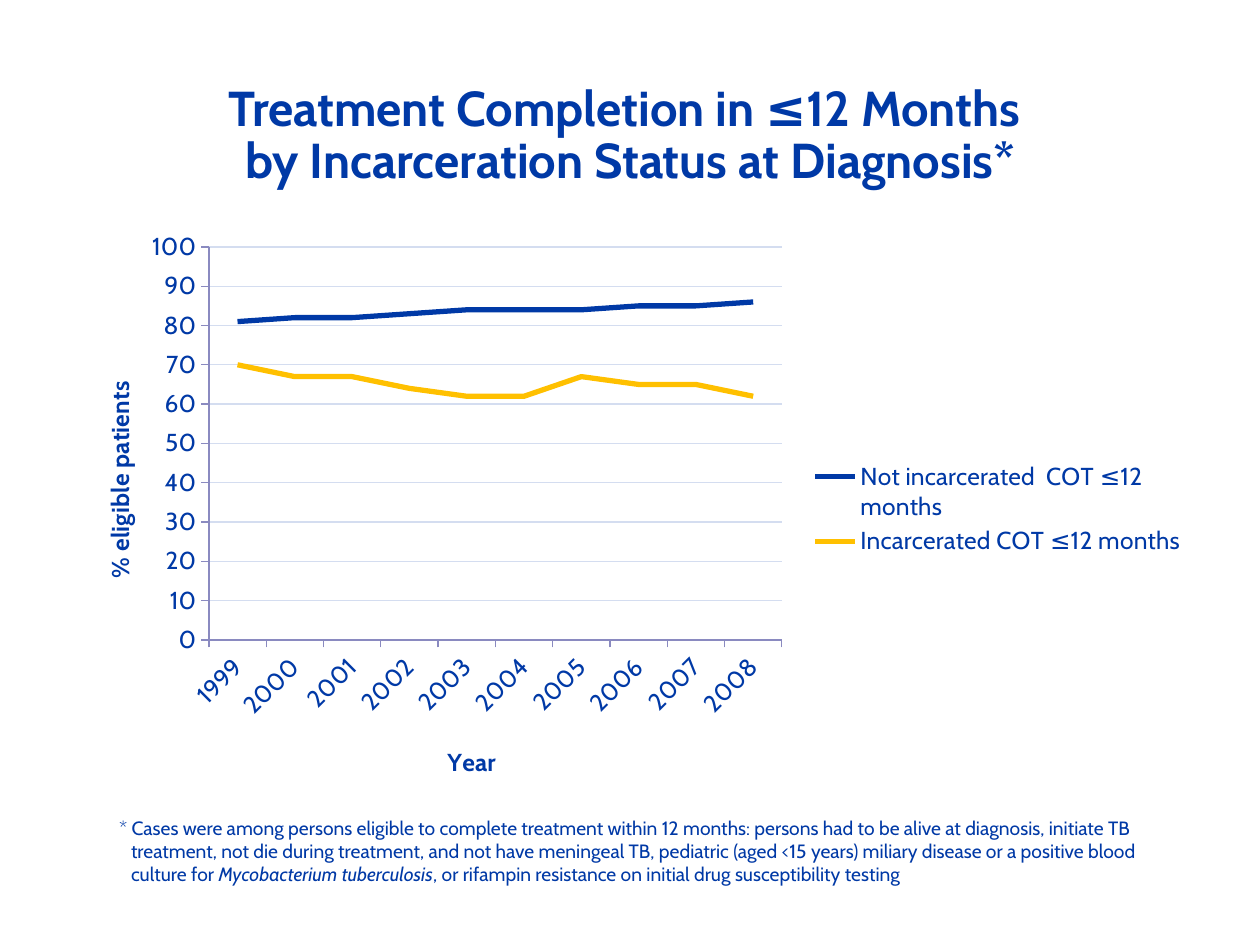
from lxml import etree
from pptx import Presentation
from pptx.chart.data import CategoryChartData
from pptx.dml.color import RGBColor
from pptx.enum.chart import XL_CHART_TYPE, XL_LEGEND_POSITION, XL_TICK_MARK
from pptx.enum.text import MSO_ANCHOR, PP_ALIGN
from pptx.oxml.ns import qn
from pptx.util import Emu, Pt

BLUE = RGBColor(0x00, 0x39, 0xA6)
GOLD = RGBColor(0xFF, 0xC0, 0x00)
GRID = RGBColor(0xD4, 0xDD, 0xF0)
AXIS = RGBColor(0x8A, 0x8A, 0xC0)
FONT = "Cabin"

CHART_BOX = (63, 220, 1134, 577)
YEARS = [str(year) for year in range(1999, 2009)]
SERIES = [
    ("Not incarcerated  COT ≤12 months ", BLUE, [81, 82, 82, 83, 84, 84, 84, 85, 85, 86]),
    ("Incarcerated COT ≤12 months", GOLD, [70, 67, 67, 64, 62, 62, 67, 65, 65, 62]),
]
TITLE_LINES = ["Treatment Completion in ≤12 Months ", "by Incarceration Status at Diagnosis*"]
FOOTNOTE_LINES = [
    [("* Cases were among persons eligible to complete treatment within 12 months: "
      "persons had to be alive at diagnosis, initiate TB", False)],
    [("treatment, not die during treatment, and not have meningeal TB, "
      "pediatric (aged <15 years) miliary disease or a positive blood", False)],
    [("culture for ", False), ("Mycobacterium tuberculosis", True),
     (", or rifampin resistance on initial drug susceptibility testing", False)],
]


def px(length):
    return Emu(round(length * 914400 / 126))


def style_font(font, size, bold=False, italic=False):
    font.name = FONT
    font.size = Pt(size)
    font.bold = bold
    font.italic = italic
    font.color.rgb = BLUE


def add_run(paragraph, text, size, bold=False, italic=False):
    run = paragraph.add_run()
    run.text = text
    style_font(run.font, size, bold, italic)


def place(shape, left, top, width, height):
    shape.left, shape.top = px(left), px(top)
    shape.width, shape.height = px(width), px(height)


def fill_title(title):
    place(title, 63, 38, 1134, 157)
    frame = title.text_frame
    frame.word_wrap = True
    frame.vertical_anchor = MSO_ANCHOR.BOTTOM
    paragraph = frame.paragraphs[0]
    paragraph.alignment = PP_ALIGN.CENTER
    paragraph.line_spacing = Pt(30)
    for index, line in enumerate(TITLE_LINES):
        if index:
            paragraph.add_line_break()
        add_run(paragraph, line, 28, bold=True)


def add_footnote(slide):
    box = slide.shapes.add_textbox(px(119), px(816), px(1078), px(74))
    frame = box.text_frame
    frame.word_wrap = True
    frame.margin_left = frame.margin_right = frame.margin_top = frame.margin_bottom = 0
    paragraph = frame.paragraphs[0]
    # Hanging indent keeps the asterisk outside the text
    properties = paragraph._p.get_or_add_pPr()
    properties.set("marL", str(px(12)))
    properties.set("indent", str(px(-12)))
    for index, line in enumerate(FOOTNOTE_LINES):
        if index:
            paragraph.add_line_break()
        for text, italic in line:
            add_run(paragraph, text, 11, italic=italic)


def set_layout(element, index, left, top, width=None, height=None, inner=False):
    """Place a chart part by its slide position, as fractions of the chart."""
    for old in element.findall(qn("c:layout")):
        element.remove(old)
    layout = etree.Element(qn("c:layout"))
    manual = etree.SubElement(layout, qn("c:manualLayout"))
    chart_left, chart_top, chart_width, chart_height = CHART_BOX
    settings = [("xMode", "edge"), ("yMode", "edge"),
                ("x", (left - chart_left) / chart_width),
                ("y", (top - chart_top) / chart_height)]
    if inner:
        settings.insert(0, ("layoutTarget", "inner"))
    if width:
        settings += [("w", width / chart_width), ("h", height / chart_height)]
    for name, value in settings:
        text = value if isinstance(value, str) else f"{value:.4f}"
        etree.SubElement(manual, qn(f"c:{name}")).set("val", text)
    element.insert(index, layout)


def format_axis(axis, title, left, top):
    axis.major_tick_mark = XL_TICK_MARK.OUTSIDE
    axis.minor_tick_mark = XL_TICK_MARK.NONE
    axis.format.line.color.rgb = AXIS
    axis.format.line.width = Pt(0.75)
    style_font(axis.tick_labels.font, 14)
    paragraph = axis.axis_title.text_frame.paragraphs[0]
    add_run(paragraph, title, 14, bold=True)
    set_layout(axis.axis_title._element, 1, left, top)


def add_line_chart(slide):
    data = CategoryChartData()
    data.categories = YEARS
    for name, _, values in SERIES:
        data.add_series(name, values)
    box = [px(length) for length in CHART_BOX]
    chart = slide.shapes.add_chart(XL_CHART_TYPE.LINE, *box, data).chart
    chart.has_title = False
    style_font(chart.font, 10)
    plot = chart.plots[0]
    plot.vary_by_categories = False
    for series, (_, color, _) in zip(plot.series, SERIES):
        series.smooth = False
        series.format.line.color.rgb = color
        series.format.line.width = Pt(3)

    # Axes
    format_axis(chart.category_axis, "Year", 443, 741)
    labels = chart.category_axis._element.find(qn("c:txPr"))
    labels.find(qn("a:bodyPr")).set("rot", "-2700000")
    value_axis = chart.value_axis
    format_axis(value_axis, "% eligible patients", 98, 377)
    title_body = value_axis.axis_title.text_frame._txBody.find(qn("a:bodyPr"))
    title_body.set("rot", "-5400000")
    title_body.set("vert", "horz")
    value_axis.minimum_scale, value_axis.maximum_scale = 0, 100
    value_axis.major_unit = 10
    value_axis.has_major_gridlines = True
    value_axis.major_gridlines.format.line.color.rgb = GRID
    value_axis.major_gridlines.format.line.width = Pt(0.75)

    # Legend and plot area
    chart.has_legend = True
    chart.legend.position = XL_LEGEND_POSITION.RIGHT
    chart.legend.include_in_layout = False
    style_font(chart.legend.font, 14)
    set_layout(chart.legend._element, 1, 807, 457, 382, 104)
    plot_area = chart._chartSpace.find(qn("c:chart")).find(qn("c:plotArea"))
    set_layout(plot_area, 0, 209, 247, 573, 393, inner=True)


def main():
    presentation = Presentation()
    presentation.slide_width, presentation.slide_height = px(1260), px(945)
    slide = presentation.slides.add_slide(presentation.slide_layouts[5])
    fill_title(slide.shapes.title)
    add_line_chart(slide)
    add_footnote(slide)
    presentation.save("out.pptx")


if __name__ == "__main__":
    main()
